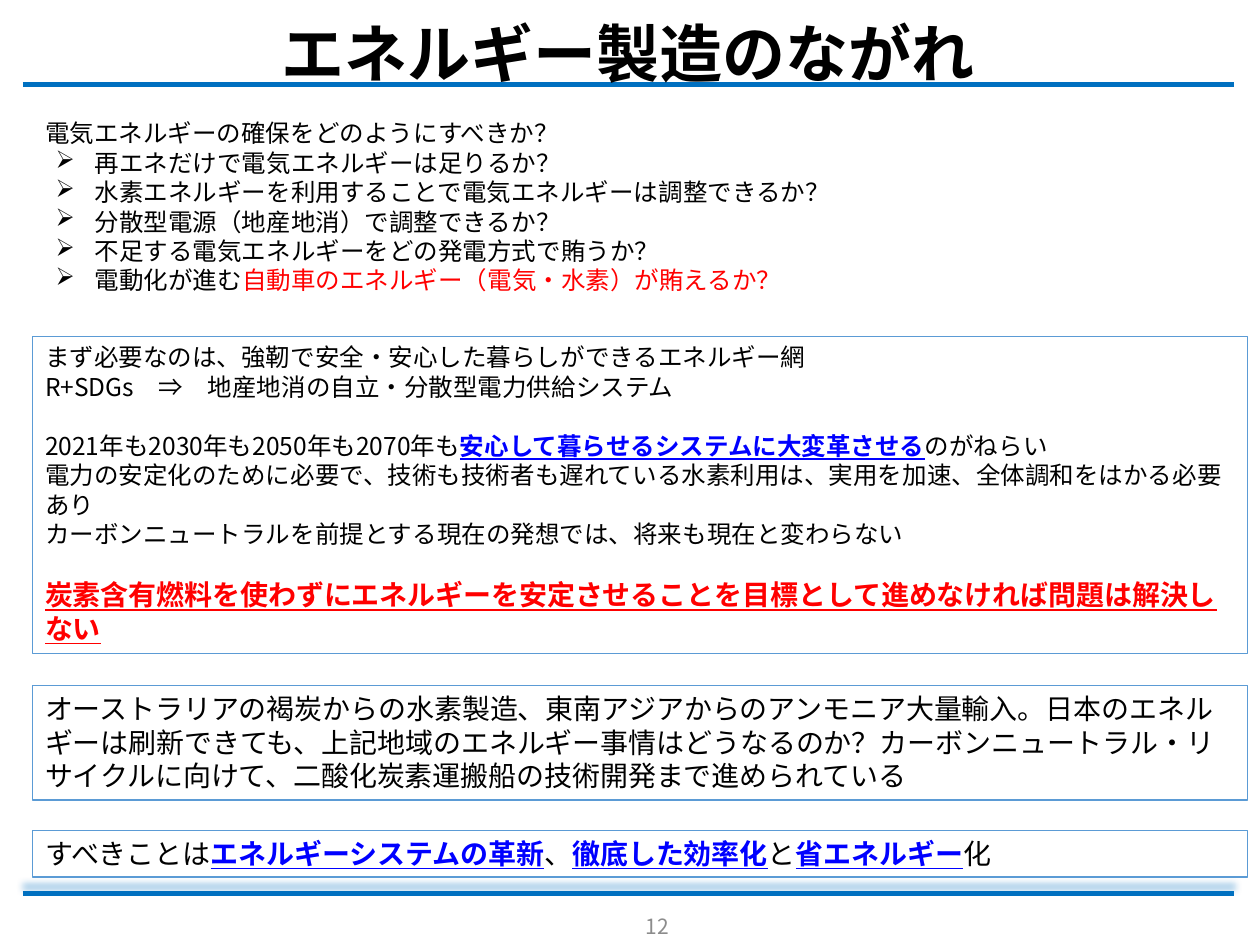
"""Build the slide on the flow of energy production."""
from dataclasses import dataclass
from typing import Optional

import lxml.etree
import pptx
import pptx.dml.color
import pptx.enum.shapes
import pptx.enum.text
import pptx.oxml.ns
import pptx.util

Cm = pptx.util.Cm
Pt = pptx.util.Pt
RGB = pptx.dml.color.RGBColor
Align = pptx.enum.text.PP_ALIGN
Anchor = pptx.enum.text.MSO_ANCHOR
qn = pptx.oxml.ns.qn

FONT = "Noto Sans CJK JP"
BLACK = RGB(0x00, 0x00, 0x00)
WHITE = RGB(0xFF, 0xFF, 0xFF)
RED = RGB(0xFF, 0x00, 0x00)
BLUE = RGB(0x00, 0x00, 0xFF)
GRAY = RGB(0x8C, 0x8C, 0x8C)
RULE_BLUE = RGB(0x00, 0x70, 0xC0)
BORDER_BLUE = RGB(0x5B, 0x9B, 0xD5)
LEADING = 1.2


@dataclass(frozen=True)
class Span:
    text: str
    color: RGB = BLACK
    strong: bool = False
    underline: bool = False


@dataclass(frozen=True)
class Line:
    spans: tuple[Span, ...]
    size: float = 14
    bullet: bool = False
    before: float = 0
    align: Align = Align.LEFT
    leading: Optional[float] = None


@dataclass(frozen=True)
class Panel:
    left: float
    top: float
    width: float
    height: float
    lines: tuple[Line, ...]
    border: Optional[RGB] = None


def plain(text: str, **options) -> Line:
    return Line((Span(text),), **options)


def key(text: str, color: RGB = BLUE) -> Span:
    return Span(text, color, True, True)


def write_lines(frame, lines: tuple[Line, ...], anchor: Anchor) -> None:
    frame.word_wrap = True
    frame.vertical_anchor = anchor
    for index, line in enumerate(lines):
        paragraph = frame.add_paragraph() if index else frame.paragraphs[0]
        layout = {
            "alignment": line.align,
            "line_spacing": Pt(line.leading or line.size * LEADING),
            "space_before": Pt(line.before),
        }
        for name, value in layout.items():
            setattr(paragraph, name, value)
        if line.bullet:
            properties = paragraph._p.get_or_add_pPr()
            properties.set("marL", str(Cm(1)))
            properties.set("indent", str(Cm(-0.79)))
            lxml.etree.SubElement(properties, qn("a:buChar"), char="➢")
        for span in line.spans:
            run = paragraph.add_run()
            run.text = span.text
            run.font.color.rgb = span.color
            formats = {"name": FONT, "size": Pt(line.size),
                       "bold": span.strong, "underline": span.underline}
            for name, value in formats.items():
                setattr(run.font, name, value)
            lxml.etree.SubElement(run._r.get_or_add_rPr(), qn("a:ea"), typeface=FONT)


def draw_panel(slide, panel: Panel) -> None:
    box = slide.shapes.add_shape(
        pptx.enum.shapes.MSO_SHAPE.RECTANGLE,
        Cm(panel.left), Cm(panel.top), Cm(panel.width), Cm(panel.height))
    box.shadow.inherit = False
    box.fill.solid()
    box.fill.fore_color.rgb = WHITE
    if panel.border is None:
        box.line.fill.background()
    else:
        box.line.color.rgb = panel.border
        box.line.width = Pt(0.75)
    write_lines(box.text_frame, panel.lines, Anchor.TOP)


def draw_label(slide, panel: Panel) -> None:
    label = slide.shapes.add_textbox(
        Cm(panel.left), Cm(panel.top), Cm(panel.width), Cm(panel.height))
    write_lines(label.text_frame, panel.lines, Anchor.MIDDLE)


def draw_rule(slide, top: float, shaded: bool) -> None:
    rule = slide.shapes.add_connector(
        pptx.enum.shapes.MSO_CONNECTOR.STRAIGHT,
        Cm(0.46), Cm(top), Cm(24.87), Cm(top))
    rule.line.color.rgb = RULE_BLUE
    rule.line.width = Pt(3)
    effects = lxml.etree.SubElement(rule._element.spPr, qn("a:effectLst"))
    if shaded:
        shadow = lxml.etree.SubElement(
            effects, qn("a:outerShdw"), blurRad=str(Pt(4)), dist=str(Pt(4)),
            dir="16200000", rotWithShape="0")
        tint = lxml.etree.SubElement(shadow, qn("a:srgbClr"), val=str(RULE_BLUE))
        lxml.etree.SubElement(tint, qn("a:alpha"), val="40000")


TITLE = Panel(0.46, 0.15, 24.41, 1.8, (
    Line((Span("エネルギー製造のながれ", strong=True),),
         size=36, align=Align.CENTER, leading=43),))
PAGE_NUMBER = Panel(7.49, 18.16, 11.53, 1.02, (
    Line((Span("12", GRAY),), size=12, align=Align.CENTER),))

QUESTIONS = Panel(0.66, 2.26, 16.48, 3.84, (
    plain("電気エネルギーの確保をどのようにすべきか？"),
    plain("再エネだけで電気エネルギーは足りるか？", bullet=True),
    plain("水素エネルギーを利用することで電気エネルギーは調整できるか？", bullet=True),
    plain("分散型電源（地産地消）で調整できるか？", bullet=True),
    plain("不足する電気エネルギーをどの発電方式で賄うか？", bullet=True),
    Line((Span("電動化が進む"),
          Span("自動車のエネルギー（電気・水素）が賄えるか？", RED)), bullet=True),
))
GOALS = Panel(0.66, 6.78, 24.49, 6.4, (
    plain("まず必要なのは、強靭で安全・安心した暮らしができるエネルギー網"),
    plain("R+SDGs　⇒　地産地消の自立・分散型電力供給システム"),
    Line((Span("2021年も2030年も2050年も2070年も"),
          key("安心して暮らせるシステムに大変革させる"),
          Span("のがねらい")), before=14 * LEADING),
    plain("電力の安定化のために必要で、技術も技術者も遅れている水素利用は、"
          "実用を加速、全体調和をはかる必要あり"),
    plain("カーボンニュートラルを前提とする現在の発想では、将来も現在と変わらない"),
    Line((key("炭素含有燃料を使わずにエネルギーを安定させることを目標として"
              "進めなければ問題は解決しない", RED),), size=16, before=14 * LEADING),
), BORDER_BLUE)
IMPORTS = Panel(0.66, 13.82, 24.49, 2.31, (
    plain("オーストラリアの褐炭からの水素製造、東南アジアからのアンモニア大量輸入。"
          "日本のエネルギーは刷新できても、上記地域のエネルギー事情はどうなるのか？"
          "カーボンニュートラル・リサイクルに向けて、"
          "二酸化炭素運搬船の技術開発まで進められている", size=16),
), BORDER_BLUE)
ACTIONS = Panel(0.66, 16.74, 24.49, 0.94, (
    Line((Span("すべきことは"), key("エネルギーシステムの革新"), Span("、"),
          key("徹底した効率化"), Span("と"), key("省エネルギー"), Span("化")), size=16),
), BORDER_BLUE)


def main() -> None:
    deck = pptx.Presentation()
    deck.slide_width, deck.slide_height = Cm(25.4), Cm(19.05)
    slide = deck.slides.add_slide(deck.slide_layouts[6])
    draw_rule(slide, 1.7, shaded=False)
    draw_rule(slide, 18.01, shaded=True)
    draw_label(slide, TITLE)
    for panel in (GOALS, QUESTIONS, IMPORTS, ACTIONS):
        draw_panel(slide, panel)
    draw_label(slide, PAGE_NUMBER)
    deck.save("out.pptx")


if __name__ == "__main__":
    main()
